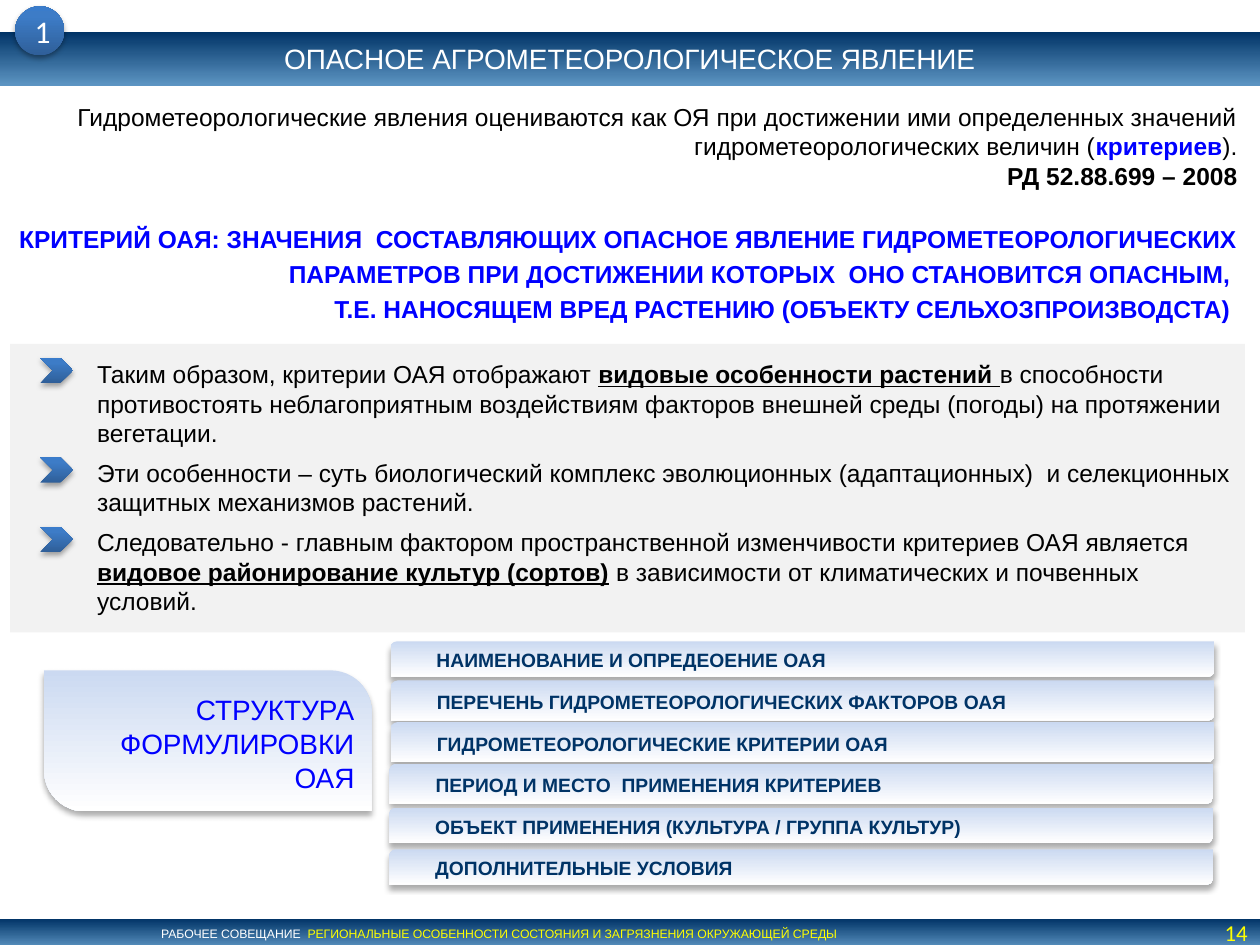
from copy import deepcopy

from lxml.etree import SubElement
from pptx import Presentation
from pptx.dml.color import RGBColor
from pptx.enum.shapes import MSO_SHAPE
from pptx.enum.text import MSO_ANCHOR, MSO_AUTO_SIZE, PP_ALIGN
from pptx.oxml.ns import qn
from pptx.util import Inches, Pt

BLUE, NAVY, YELLOW, WHITE, BLACK = "0000FF", "003366", "FFFF00", "FFFFFF", "000000"
BAND = ([(0, NAVY), (100, "5D95C3")], 90)
PALE = ([(0, "CBD9F1"), (100, WHITE)], 90)
MARKER = ([(0, "2F5F99"), (80, "3D7CC7"), (100, "3A7CCB")], 270)
PALE_SHADOW = (32, 3.5, 2.2)
MARKER_SHADOW = (35, 3.1, 1.8)


def color(value):
    return RGBColor.from_string(value)


def add_text(para, text, size=14, font="Arial", fill=BLACK, bold=False, underline=False):
    span = para.add_run()
    span.text = text
    span.font.size = Pt(size)
    span.font.name = font
    span.font.color.rgb = color(fill)
    span.font.bold = bold
    span.font.underline = underline


class SlideBuilder:
    def __init__(self, page):
        self.page = page

    def place(self, shape, area):
        shape.left, shape.top, shape.width, shape.height = [Inches(n) for n in area]

    def gradient(self, shape, stops, angle):
        shape.fill.gradient()
        shape.fill.gradient_angle = 360 - angle
        stop_list = shape._element.spPr.find(qn("a:gradFill")).find(qn("a:gsLst"))
        while len(stop_list) < len(stops):
            stop_list.append(deepcopy(stop_list[-1]))
        for stop, (position, value) in zip(shape.fill.gradient_stops, stops):
            stop.position = position / 100
            stop.color.rgb = color(value)

    def cast_shadow(self, shape, opacity, blur, distance):
        effects = shape._element.spPr.find(qn("a:effectLst"))
        shadow = SubElement(effects, qn("a:outerShdw"), blurRad=str(Pt(blur)),
                            dist=str(Pt(distance)), dir="5400000", rotWithShape="0")
        tone = SubElement(shadow, qn("a:srgbClr"), val=BLACK)
        SubElement(tone, qn("a:alpha"), val=str(opacity * 1000))

    def shape(self, kind, area, gradient, shadow=None, adjustments=()):
        box = self.page.shapes.add_shape(kind, *[Inches(n) for n in area])
        box.shadow.inherit = False
        box.line.fill.background()
        self.gradient(box, *gradient)
        for index, value in enumerate(adjustments):
            box.adjustments[index] = value
        if shadow:
            self.cast_shadow(box, *shadow)
        return box

    def frame(self, box, insets=(0.1, 0.05, 0.1, 0.05), anchor=MSO_ANCHOR.MIDDLE):
        frame = box.text_frame
        frame.word_wrap = True
        frame.auto_size = MSO_AUTO_SIZE.NONE
        frame.vertical_anchor = anchor
        (frame.margin_left, frame.margin_top,
         frame.margin_right, frame.margin_bottom) = [Inches(n) for n in insets]
        return frame

    def paragraph(self, frame, spans, align=PP_ALIGN.LEFT, indent=0, before=0, after=0, leading=1.0):
        first = frame.paragraphs[0]
        para = frame.add_paragraph() if first.runs else first
        properties = para._p.get_or_add_pPr()
        properties.set("marL", str(Inches(indent)))
        properties.set("indent", "0")
        SubElement(properties, qn("a:buNone"))
        para.alignment = align
        para.line_spacing = leading
        para.space_before = Pt(before)
        para.space_after = Pt(after)
        for text, style in spans:
            add_text(para, text, **style)

    def title(self, text, area):
        box = self.page.shapes.title
        self.place(box, area)
        self.gradient(box, *BAND)
        frame = self.frame(box, (0.2, 0.08, 0.2, 0.08))
        self.paragraph(frame, [(text, dict(size=16, fill=WHITE))], PP_ALIGN.CENTER)

    def body(self, items, area):
        box = self.page.placeholders[1]
        self.place(box, area)
        box.fill.solid()
        box.fill.fore_color.rgb = color("F2F2F2")
        frame = self.frame(box, (0.1, 0.12, 0.1, 0.12), MSO_ANCHOR.TOP)
        for spans in items:
            self.paragraph(frame, spans, indent=0.59, after=6)

    def text_box(self, area, **layout):
        box = self.page.shapes.add_textbox(*[Inches(n) for n in area])
        return self.frame(box, **layout)

    def footer(self, spans, number):
        band = self.shape(MSO_SHAPE.RECTANGLE, (0, 7.29, 10, 0.24), BAND)
        self.paragraph(self.frame(band), spans, indent=1.18)
        frame = self.text_box((9.21, 7.29, 0.79, 0.22), insets=(0.1, 0, 0.1, 0))
        style = dict(size=13, font="Calibri", fill=YELLOW)
        self.paragraph(frame, [(number, style)], PP_ALIGN.RIGHT)

    def structure_label(self, text):
        label = self.shape(MSO_SHAPE.ROUND_2_DIAG_RECTANGLE, (0.35, 5.32, 2.6, 1.12),
                           PALE, PALE_SHADOW, (0, 0.292))
        frame = self.frame(label, (0.16, 0.08, 0.04, 0.04))
        self.paragraph(frame, [(text, dict(size=16, fill=BLUE))], PP_ALIGN.RIGHT, indent=0.19)

    def structure_bar(self, text, left, top, height):
        bar = self.shape(MSO_SHAPE.ROUND_2_DIAG_RECTANGLE, (left, top, 6.54, height),
                         PALE, PALE_SHADOW, (0.181, 0))
        frame = self.frame(bar, (0.16, 0.06, 0.04, 0.04))
        self.paragraph(frame, [(text, dict(size=11, fill=NAVY, bold=True))], indent=0.19)

    def badge(self, text):
        circle = self.shape(MSO_SHAPE.OVAL, (0.12, 0.05, 0.39, 0.39), MARKER, MARKER_SHADOW)
        frame = self.frame(circle, (0.1, 0.04, 0.1, 0.04))
        style = dict(size=18, font="Calibri", fill=WHITE)
        self.paragraph(frame, [(text, style)], PP_ALIGN.CENTER)

    def chevron(self, top):
        self.shape(MSO_SHAPE.CHEVRON, (0.32, top, 0.26, 0.2), MARKER, MARKER_SHADOW)


def main():
    deck = Presentation()
    deck.slide_width, deck.slide_height = Inches(10), Inches(7.5)
    slide = SlideBuilder(deck.slides.add_slide(deck.slide_layouts[1]))
    key = dict(bold=True, underline=True)
    criterion = dict(fill=BLUE, bold=True)

    slide.title("ОПАСНОЕ АГРОМЕТЕОРОЛОГИЧЕСКОЕ ЯВЛЕНИЕ", (0, 0.25, 10, 0.43))
    slide.body([
        [("Таким образом, критерии ОАЯ отображают ", {}),
         ("видовые особенности растений ", key),
         ("в способности противостоять неблагоприятным воздействиям факторов внешней среды "
          "(погоды) на протяжении вегетации.", {})],
        [("Эти особенности – суть биологический комплекс эволюционных (адаптационных)  и "
          "селекционных защитных механизмов растений.", {})],
        [("Следовательно - главным фактором пространственной изменчивости критериев ОАЯ "
          "является ", {}),
         ("видовое районирование культур (сортов)", key),
         (" в зависимости от климатических и почвенных условий.", {})],
    ], (0.08, 2.73, 9.8, 2.29))
    slide.footer([
        ("РАБОЧЕЕ СОВЕЩАНИЕ  ", dict(size=7, fill=WHITE)),
        ("РЕГИОНАЛЬНЫЕ ОСОБЕННОСТИ СОСТОЯНИЯ И ЗАГРЯЗНЕНИЯ ОКРУЖАЮЩЕЙ СРЕДЫ",
         dict(size=7, fill=YELLOW)),
    ], "14")

    definition = slide.text_box((0.04, 0.76, 9.88, 1.89), anchor=MSO_ANCHOR.TOP)
    slide.paragraph(definition, [
        ("Гидрометеорологические явления оцениваются как ОЯ при достижении ими определенных "
         "значений гидрометеорологических величин (", {}),
        ("критериев", criterion),
        (").", {}),
    ], PP_ALIGN.RIGHT)
    slide.paragraph(definition, [("РД 52.88.699 – 2008", dict(bold=True))], PP_ALIGN.RIGHT)
    for text, before in [
        ("КРИТЕРИЙ ОАЯ: ЗНАЧЕНИЯ  СОСТАВЛЯЮЩИХ ОПАСНОЕ ЯВЛЕНИЕ ГИДРОМЕТЕОРОЛОГИЧЕСКИХ  "
         "ПАРАМЕТРОВ ПРИ ДОСТИЖЕНИИ КОТОРЫХ  ОНО СТАНОВИТСЯ ОПАСНЫМ, ", 16),
        ("Т.Е. НАНОСЯЩЕМ ВРЕД РАСТЕНИЮ (ОБЪЕКТУ СЕЛЬХОЗПРОИЗВОДСТА) ", 0),
    ]:
        slide.paragraph(definition, [(text, criterion)], PP_ALIGN.RIGHT,
                        before=before, leading=Pt(20))

    slide.structure_label("СТРУКТУРА ФОРМУЛИРОВКИ ОАЯ")
    for text, left, top, height in [
        ("НАИМЕНОВАНИЕ И ОПРЕДЕОЕНИЕ ОАЯ", 3.1, 5.09, 0.28),
        ("ПЕРЕЧЕНЬ ГИДРОМЕТЕОРОЛОГИЧЕСКИХ ФАКТОРОВ ОАЯ", 3.1, 5.4, 0.32),
        ("ГИДРОМЕТЕОРОЛОГИЧЕСКИЕ КРИТЕРИИ ОАЯ", 3.1, 5.73, 0.32),
        ("ПЕРИОД И МЕСТО  ПРИМЕНЕНИЯ КРИТЕРИЕВ", 3.09, 6.06, 0.32),
        ("ОБЪЕКТ ПРИМЕНЕНИЯ (КУЛЬТУРА / ГРУППА КУЛЬТУР)", 3.09, 6.41, 0.28),
        ("ДОПОЛНИТЕЛЬНЫЕ УСЛОВИЯ", 3.09, 6.74, 0.28),
    ]:
        slide.structure_bar(text, left, top, height)

    slide.badge("1")
    for top in (2.84, 3.63, 4.18):
        slide.chevron(top)
    deck.save("out.pptx")


if __name__ == "__main__":
    main()
